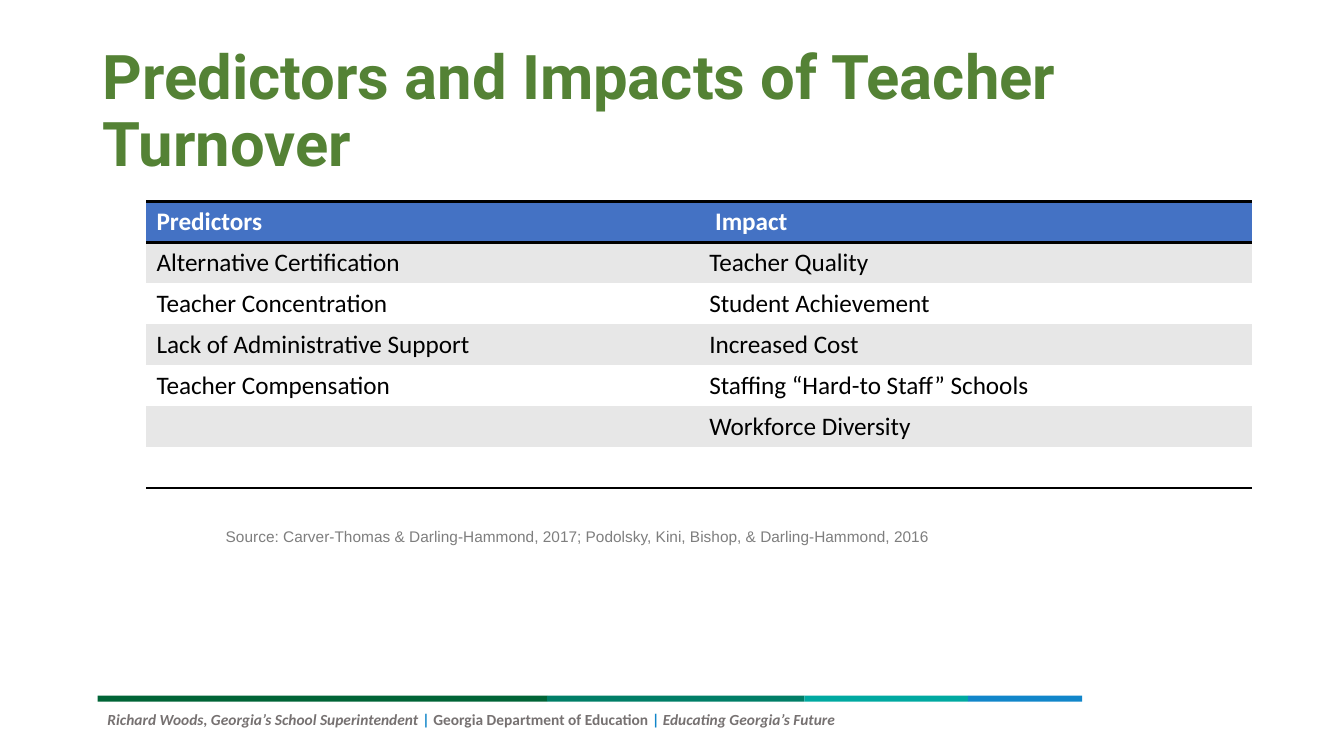
import pptx
import pptx.util
import pptx.dml.color
import pptx.enum.shapes
import pptx.enum.text
import pptx.oxml
import pptx.oxml.ns
from pptx.util import Cm


def style(font, size, name, color, bold=False, italic=False):
    font.size = pptx.util.Pt(size)
    font.name = name
    font.bold = bold
    font.italic = italic
    font.color.rgb = rgb(color)


def rgb(color):
    return pptx.dml.color.RGBColor.from_string(color)


presentation = pptx.Presentation()
presentation.slide_width = Cm(33.87)
presentation.slide_height = Cm(19.05)
slide = presentation.slides.add_slide(presentation.slide_layouts[5])

# Footer bar: four coloured segments, end to end
segment_left = 2.46
for width, color in [(11.33, "006436"), (6.48, "007E67"), (4.13, "00A9A1"), (2.87, "1186CA")]:
    segment = slide.shapes.add_shape(
        pptx.enum.shapes.MSO_SHAPE.RECTANGLE,
        Cm(segment_left), Cm(17.53), Cm(width), Cm(0.15))
    segment.shadow.inherit = False
    segment.fill.solid()
    segment.fill.fore_color.rgb = rgb(color)
    segment.line.fill.background()
    segment_left += width

# Footer text
footer = slide.shapes.add_textbox(Cm(2.46), Cm(17.78), Cm(31.2), Cm(1.19))
footer.text_frame.word_wrap = True
footer_paragraph = footer.text_frame.paragraphs[0]
for text, color, italic in [
    ("Richard Woods, Georgia’s School Superintendent ", "767171", True),
    ("|", "1186CA", False),
    (" Georgia Department of Education ", "767171", False),
    ("| ", "1186CA", False),
    ("Educating Georgia’s Future", "767171", True),
]:
    run = footer_paragraph.add_run()
    run.text = text
    style(run.font, 11, "Calibri", color, bold=True, italic=italic)

# Title
title = slide.shapes.title
title.left, title.top, title.width, title.height = Cm(2.33), Cm(1.01), Cm(29.21), Cm(3.68)
title.text_frame.text = "Predictors and Impacts of Teacher Turnover"
title.text_frame.word_wrap = True
title.text_frame.auto_size = pptx.enum.text.MSO_AUTO_SIZE.NONE
title.text_frame.vertical_anchor = pptx.enum.text.MSO_ANCHOR.MIDDLE
title_paragraph = title.text_frame.paragraphs[0]
title_paragraph.alignment = pptx.enum.text.PP_ALIGN.LEFT
title_paragraph.line_spacing = 0.9
style(title_paragraph.font, 44, "Roboto", "548235", bold=True)

# Table of predictors and impacts
rows = [
    ("Predictors", "Impact"),
    ("Alternative Certification", "Teacher Quality"),
    ("Teacher Concentration", "Student Achievement"),
    ("Lack of Administrative Support", "Increased Cost"),
    ("Teacher Compensation", "Staffing “Hard-to Staff” Schools"),
    ("", "Workforce Diversity"),
    ("", ""),
]
last_row = len(rows) - 1
frame = slide.shapes.add_table(
    len(rows), 2, Cm(3.69), Cm(5.08), Cm(27.86), Cm(1.03 * len(rows)))
table = frame.table
# Plain table style without grid lines
style_id = table._tbl.tblPr.find(pptx.oxml.ns.qn("a:tableStyleId"))
style_id.text = "{2D5ABB26-0587-4C30-8999-92F81FD0307C}"

for row_index, texts in enumerate(rows):
    is_header = row_index == 0
    if is_header:
        fill, borders = "4472C4", ("lnB", "lnT")
    else:
        fill = "E7E7E7" if row_index % 2 else "FFFFFF"
        borders = ("lnB",) if row_index == last_row else ()
    for column_index, text in enumerate(texts):
        cell = table.cell(row_index, column_index)
        cell.text = text
        cell.fill.solid()
        cell.fill.fore_color.rgb = rgb(fill)
        style(cell.text_frame.paragraphs[0].font, 18, "Calibri",
              "FFFFFF" if is_header else "000000", bold=is_header)
        for border in borders:
            line = pptx.oxml.parse_xml(
                f'<a:{border} {pptx.oxml.ns.nsdecls("a")} w="25400"><a:solidFill>'
                f'<a:srgbClr val="000000"/></a:solidFill></a:{border}>')
            cell._tc.get_or_add_tcPr().insert(0, line)
# The second heading sits slightly further in
table.cell(0, 1).margin_left = Cm(0.4)

# Source line
source = slide.shapes.add_textbox(Cm(5.44), Cm(13.16), Cm(23.09), Cm(0.72))
source.text_frame.word_wrap = True
source_paragraph = source.text_frame.paragraphs[0]
source_paragraph.text = (
    "Source: Carver-Thomas & Darling-Hammond, 2017; "
    "Podolsky, Kini, Bishop, & Darling-Hammond, 2016")
style(source_paragraph.font, 11, "Arial", "7E7E7E")

presentation.save("out.pptx")
